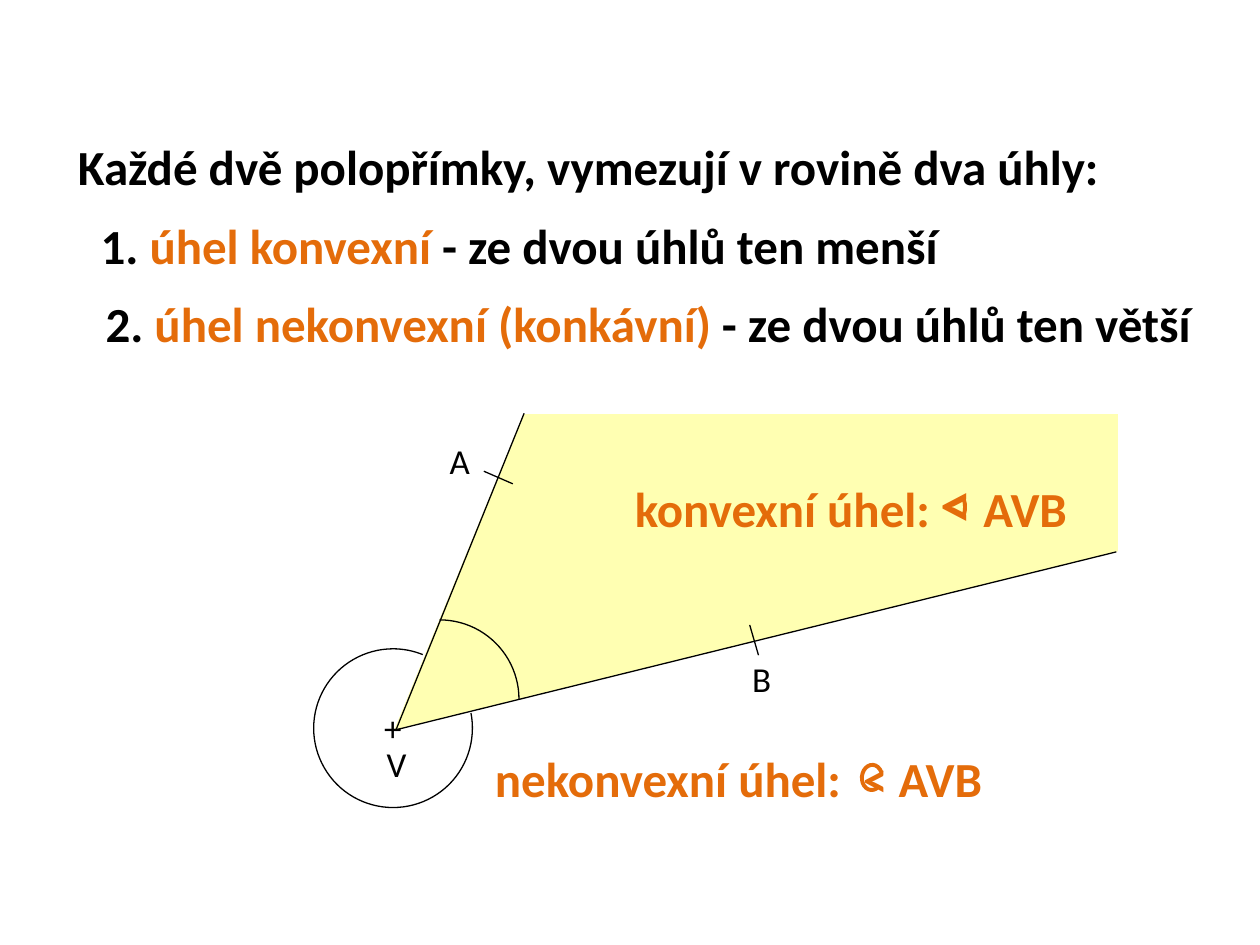
from dataclasses import dataclass

from lxml import etree
from pptx import Presentation
from pptx.dml import color
from pptx.enum import shapes, text
from pptx.oxml import ns
from pptx.util import Inches, Pt

COLUMNS, ROWS = 100, 75
WIDTH, HEIGHT = Inches(10), Inches(7.5)


@dataclass(frozen=True)
class Theme:
    font: str = "Calibri"
    ink: str = "000000"
    accent: str = "E46C0A"
    paper: str = "FFFFFF"
    sector: str = "FFFF00"
    sector_opacity: int = 30
    body: int = 28
    label: int = 20
    sign: int = 36
    thin: float = 0.75
    thick: float = 2.25


@dataclass(frozen=True)
class Box:
    left: float
    top: float
    width: float
    height: float

    def inner(self, left, top, width, height):
        return Box(self.left + left, self.top + top, width, height)

    def point(self, column, row):
        return (round((self.left + column) * WIDTH / COLUMNS),
                round((self.top + row) * HEIGHT / ROWS))

    def frame(self):
        left, top = self.point(0, 0)
        right, bottom = self.point(self.width, self.height)
        return left, top, right - left, bottom - top


THEME = Theme()


def rgb(value):
    return color.RGBColor.from_string(value)


def set_line(item, value, weight=THEME.thin):
    item.line.color.rgb = rgb(value)
    item.line.width = Pt(weight)


def add_text(page, box, *spans, size=THEME.body, ink=THEME.ink, bold=True,
             anchor=text.MSO_ANCHOR.MIDDLE):
    frame = page.shapes.add_textbox(*box.frame()).text_frame
    frame.word_wrap = True
    frame.vertical_anchor = anchor
    para = frame.paragraphs[0]
    for words, changes in spans:
        span = para.add_run()
        span.text = words
        span.font.name = THEME.font
        span.font.bold = bold
        span.font.size = Pt(changes.get("size", size))
        span.font.color.rgb = rgb(changes.get("ink", ink))


def add_segment(page, box, start, end):
    line = page.shapes.add_connector(
        shapes.MSO_CONNECTOR.STRAIGHT, *box.point(*start), *box.point(*end))
    set_line(line, THEME.ink)
    etree.SubElement(line._element.spPr, ns.qn("a:effectLst"))


def add_arc(page, box, start, end, ink=THEME.ink, weight=THEME.thin, turn=0):
    arc = page.shapes.add_shape(shapes.MSO_SHAPE.ARC, *box.frame())
    arc.shadow.inherit = False
    arc.fill.background()
    set_line(arc, ink, weight)
    for index, degrees in enumerate((start, end)):
        arc.adjustments[index] = degrees * 0.6
    arc.rotation = turn


def add_definitions(page, box):
    accent = {"ink": THEME.accent}
    lines = [
        (0, 88.3, [("Každé dvě polopřímky, vymezují v rovině dva úhly:", {})]),
        (1.8, 80.9, [("1. ", {}), ("úhel konvexní ", accent),
                     ("- ze dvou úhlů ten menší", {})]),
        (2.2, 90.4, [("2.", {}), (" úhel nekonvexní (konkávní) ", accent),
                     ("- ze dvou úhlů ten větší", {})]),
    ]
    pitch = box.height / len(lines)
    for index, (indent, width, spans) in enumerate(lines):
        add_text(page, box.inner(indent, index * pitch, width, pitch), *spans)


def add_sector(page, box):
    ground = page.shapes.add_shape(shapes.MSO_SHAPE.RECTANGLE, *box.frame())
    corners = [(20.6, 4.9), (67.9, 4.9), (67.9, 15.9), (10.3, 30.1)]
    first, *others = [box.point(*corner) for corner in corners]
    builder = page.shapes.build_freeform(*first)
    builder.add_line_segments(others, close=True)
    sector = builder.convert_to_shape()
    for shape, fill in ((ground, THEME.paper), (sector, THEME.sector)):
        shape.shadow.inherit = False
        shape.fill.solid()
        shape.fill.fore_color.rgb = rgb(fill)
        set_line(shape, THEME.paper)
    tint = sector._element.spPr.find(ns.qn("a:solidFill"))[0]
    etree.SubElement(tint, ns.qn("a:alpha"),
                     val=str(THEME.sector_opacity * 1000))


def add_angle(page, box):
    add_sector(page, box)
    segments = [
        ((10.5, 30.1), (20.7, 4.9)),
        ((10.2, 30.1), (67.7, 15.9)),
        ((17.5, 9.5), (19.8, 10.5)),
        ((38.6, 21.7), (39.3, 24.1)),
    ]
    for start, end in segments:
        add_segment(page, box, start, end)
    labels = {"+": (8.6, 27.7), "V": (8.8, 30.5),
              "A": (13.8, 6.5), "B": (37.8, 23.8)}
    for name, place in labels.items():
        add_text(page, box.inner(*place, 3.9, 4.3), (name, {}),
                 size=THEME.label, bold=False, anchor=text.MSO_ANCHOR.TOP)
    add_arc(page, box.inner(7.7, 21.3, 12.6, 12.6), 270, 0)
    add_arc(page, box.inner(4, 23.6, 12.6, 12.6), 349, 292)


def add_captions(page, box):
    accent = {"ink": THEME.accent, "weight": THEME.thick}
    add_text(page, box.inner(17.4, 30.7, 55.2, 6.3),
             ("nekonvexní úhel:  < AVB", {}), ink=THEME.accent)
    add_text(page, box.inner(28.5, 8.8, 37.6, 6.3), ("konvexní úhel: ", {}),
             ("<", {"size": THEME.sign}), (" AVB", {}), ink=THEME.accent)
    add_arc(page, box.inner(54.4, 11.2, 1.3, 2.3), 295.3, 63.9, **accent)
    add_arc(page, box.inner(47.5, 32.8, 1.6, 2), 225.1, 148, turn=184.6,
            **accent)


def main():
    deck = Presentation()
    deck.slide_width, deck.slide_height = WIDTH, HEIGHT
    page = deck.slides.add_slide(deck.slide_layouts[6])
    diagram = Box(20.9, 27.9, 75.6, 37)
    add_angle(page, diagram)
    add_captions(page, diagram)
    add_definitions(page, Box(5.2, 10, 92.6, 18.8))
    deck.save("out.pptx")


if __name__ == "__main__":
    main()
